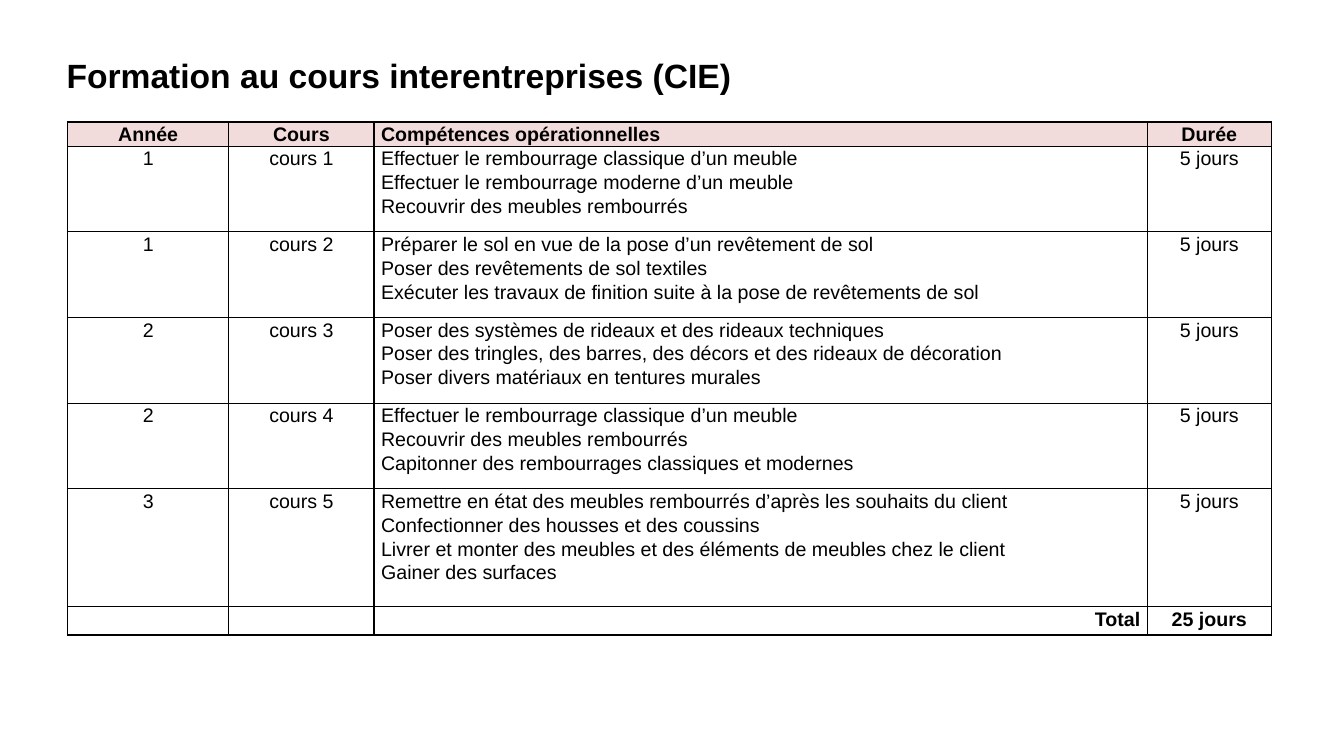
"""Build the slide listing the inter-company courses, their skills and durations."""
from dataclasses import dataclass

from lxml.etree import SubElement
from pptx import Presentation
from pptx.dml.color import RGBColor
from pptx.enum.text import MSO_ANCHOR as Anchor, PP_ALIGN as Align
from pptx.oxml.ns import qn
from pptx.util import Inches, Pt


@dataclass(frozen=True)
class Theme:
    font: str = "Arial"
    ink: RGBColor = RGBColor(0, 0, 0)
    header: RGBColor = RGBColor(0xF2, 0xDB, 0xDB)
    title_size: int = Pt(24)
    body_size: int = Pt(14)
    line_pitch: int = Pt(17)
    border: int = Pt(1)


theme = Theme()


def style_run(run, size, bold):
    formats = {"name": theme.font, "size": size, "bold": bold}
    for key, value in formats.items():
        setattr(run.font, key, value)
    run.font.color.rgb = theme.ink


def draw_borders(cell):
    properties = cell._tc.get_or_add_tcPr()
    for side in ("a:lnL", "a:lnR", "a:lnT", "a:lnB"):
        line = SubElement(properties, qn(side), w=str(theme.border))
        fill = SubElement(line, qn("a:solidFill"))
        SubElement(fill, qn("a:srgbClr"), val=str(theme.ink))


courses = [
    ("1", [
        "Effectuer le rembourrage classique d’un meuble",
        "Effectuer le rembourrage moderne d’un meuble",
        "Recouvrir des meubles rembourrés",
    ]),
    ("1", [
        "Préparer le sol en vue de la pose d’un revêtement de sol",
        "Poser des revêtements de sol textiles",
        "Exécuter les travaux de finition suite à la pose de revêtements de sol",
    ]),
    ("2", [
        "Poser des systèmes de rideaux et des rideaux techniques",
        "Poser des tringles, des barres, des décors et des rideaux de décoration",
        "Poser divers matériaux en tentures murales",
    ]),
    ("2", [
        "Effectuer le rembourrage classique d’un meuble",
        "Recouvrir des meubles rembourrés",
        "Capitonner des rembourrages classiques et modernes",
    ]),
    ("3", [
        "Remettre en état des meubles rembourrés d’après les souhaits du client",
        "Confectionner des housses et des coussins",
        "Livrer et monter des meubles et des éléments de meubles chez le client",
        "Gainer des surfaces",
    ]),
]
rows = [
    (["Année"], ["Cours"], ["Compétences opérationnelles"], ["Durée"]),
    *(([year], [f"cours {number}"], skills, ["5 jours"])
      for number, (year, skills) in enumerate(courses, start=1)),
    ([""], [""], ["Total"], ["25 jours"]),
]
column_widths = [1.6, 1.44, 7.67, 1.23]
row_heights = [0.24] + [0.85] * 4 + [1.17, 0.24]
last_row, skills_column = len(rows) - 1, 2

presentation = Presentation()
presentation.slide_width = Inches(13.33)
presentation.slide_height = Inches(7.5)
slide = presentation.slides.add_slide(presentation.slide_layouts[5])

title = slide.shapes.title
title_box = {"left": 0.56, "top": 0.4, "width": 12.53, "height": 0.74}
for key, value in title_box.items():
    setattr(title, key, Inches(value))
title.text_frame.vertical_anchor = Anchor.MIDDLE
heading = title.text_frame.paragraphs[0]
heading.alignment = Align.LEFT
heading.line_spacing = 0.9
heading_run = heading.add_run()
heading_run.text = "Formation au cours interentreprises (CIE)"
style_run(heading_run, theme.title_size, True)

course_table = slide.shapes.add_table(
    len(rows), len(column_widths), Inches(0.67), Inches(1.21),
    Inches(sum(column_widths)), Inches(sum(row_heights))).table
for column, width in zip(course_table.columns, column_widths):
    column.width = Inches(width)
for table_row, height in zip(course_table.rows, row_heights):
    table_row.height = Inches(height)

margins = {"margin_left": 0.07, "margin_right": 0.07, "margin_top": 0, "margin_bottom": 0}
for row_index, row in enumerate(rows):
    for column_index, lines in enumerate(row):
        cell = course_table.cell(row_index, column_index)
        for key, value in margins.items():
            setattr(cell, key, Inches(value))
        draw_borders(cell)
        if row_index == 0:
            cell.fill.solid()
            cell.fill.fore_color.rgb = theme.header
        else:
            cell.fill.background()

        paragraph = cell.text_frame.paragraphs[0]
        paragraph.line_spacing = theme.line_pitch
        if column_index != skills_column:
            paragraph.alignment = Align.CENTER
        else:
            paragraph.alignment = Align.RIGHT if row_index == last_row else Align.LEFT
        for line_index, line in enumerate(lines):
            if line_index:
                paragraph.add_line_break()
            run = paragraph.add_run()
            run.text = line
            style_run(run, theme.body_size, row_index in (0, last_row))

presentation.save("out.pptx")
